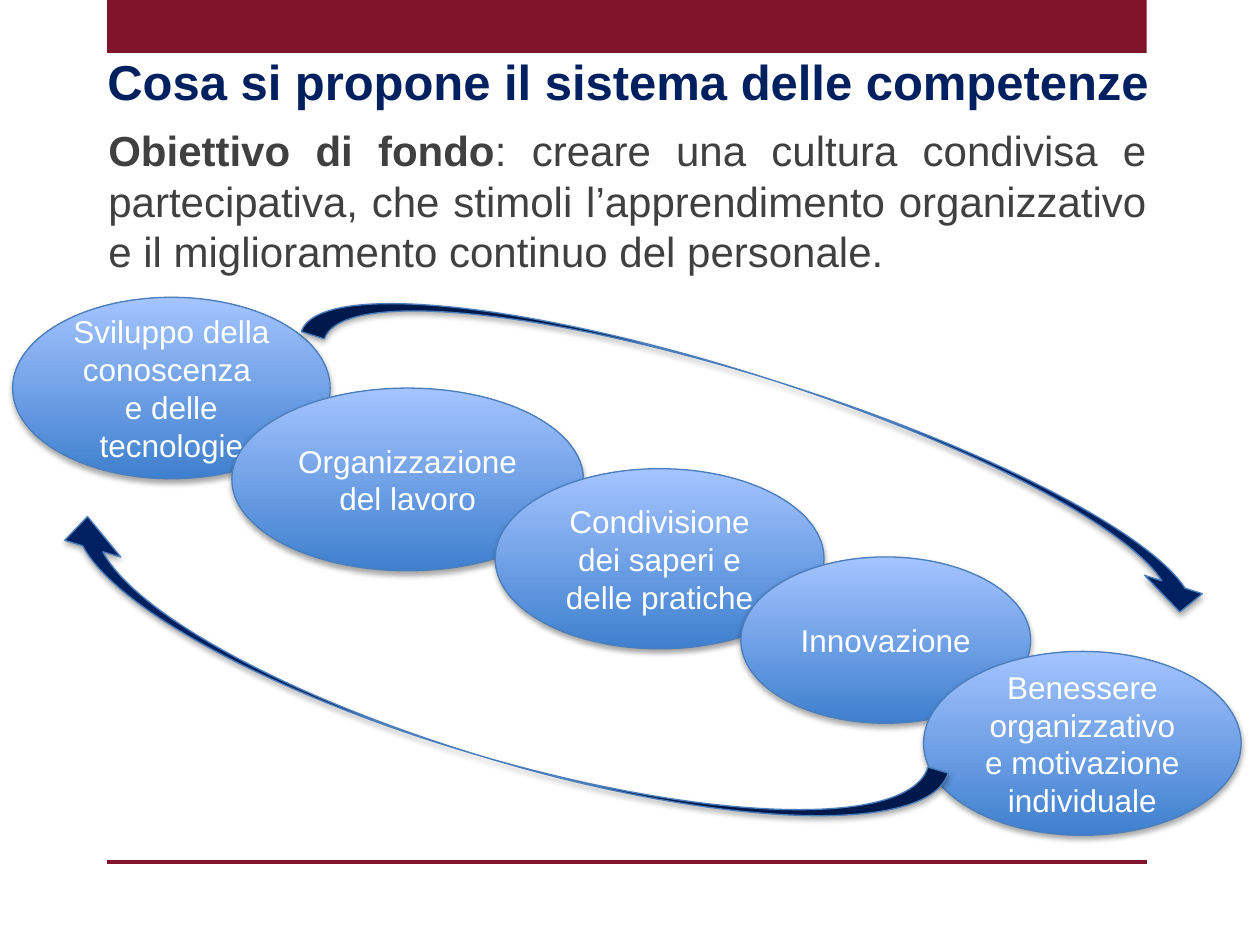
from lxml import etree
from pptx import Presentation
from pptx.dml.color import RGBColor
from pptx.enum.shapes import MSO_CONNECTOR, MSO_SHAPE
from pptx.enum.text import MSO_ANCHOR, MSO_AUTO_SIZE, PP_ALIGN
from pptx.oxml.ns import qn
from pptx.util import Inches, Pt

COLORS = {
    "band": "7F142A",
    "navy": "002060",
    "body": "404040",
    "white": "FFFFFF",
    "outline": "4B7EBC",
    "bubble_bottom": "3F80CE",
    "bubble_top": "A4C4FF",
}

# Each bubble: box (left, top, width, height) and its paragraphs
BUBBLES = [
    ((0.1, 2.36, 2.52, 1.44), ["Sviluppo della conoscenza ", "e delle tecnologie"]),
    ((1.84, 3.08, 2.79, 1.45), ["Organizzazione del lavoro"]),
    ((3.93, 3.72, 2.61, 1.43), ["Condivisione dei saperi e delle pratiche"]),
    ((5.88, 4.42, 2.3, 1.32), ["Innovazione"]),
    ((7.33, 5.17, 2.52, 1.46), ["Benessere organizzativo e motivazione individuale"]),
]

# Each cycle arrow: preset, box, rotation, adjustments
CYCLE_ARROWS = [
    (MSO_SHAPE.CURVED_DOWN_ARROW, (2.33, 3.03, 7.56, 0.77), 17.7, (0.25, 0.627, 0.25)),
    (MSO_SHAPE.CURVED_LEFT_ARROW, (3.4, 1.85, 0.93, 7.36), 106.6, (0.18, 0.5, 0.251)),
]


def color(name):
    return RGBColor.from_string(COLORS[name])


def inches(box):
    return [Inches(length) for length in box]


def place(placeholder, box):
    placeholder.left, placeholder.top, placeholder.width, placeholder.height = inches(box)
    frame = placeholder.text_frame
    frame.word_wrap = True
    frame.auto_size = MSO_AUTO_SIZE.NONE
    return frame


def style(paragraph, size, color_name, align):
    paragraph.alignment = align
    paragraph.font.name = "Arial"
    paragraph.font.size = Pt(size)
    paragraph.font.color.rgb = color(color_name)


def add_frame(slide, left, width, band_height, rule_top):
    """Band along the top edge and rule near the bottom."""
    band = slide.shapes.add_shape(MSO_SHAPE.RECTANGLE, *inches((left, 0, width, band_height)))
    band.shadow.inherit = False
    band.fill.solid()
    band.fill.fore_color.rgb = color("band")
    band.line.fill.background()

    rule = slide.shapes.add_connector(
        MSO_CONNECTOR.STRAIGHT, *inches((left, rule_top, left + width, rule_top)))
    rule.line.color.rgb = color("band")
    rule.line.width = Pt(2)
    etree.SubElement(rule._element.spPr, qn("a:effectLst"))


def add_title(slide, box):
    frame = place(slide.shapes.title, box)
    frame.text = "Cosa si propone il sistema delle competenze"
    heading = frame.paragraphs[0]
    style(heading, 28, "navy", PP_ALIGN.CENTER)
    heading.font.bold = True


def add_objective(slide, box):
    frame = place(slide.placeholders[1], box)
    frame.margin_left = 0
    objective = frame.paragraphs[0]
    objective.level = 1
    objective.space_before = Pt(0)
    properties = objective._p.get_or_add_pPr()
    properties.set("marL", str(Inches(0.5)))
    properties.set("indent", "0")
    etree.SubElement(properties, qn("a:buNone"))
    style(objective, 24, "body", PP_ALIGN.JUSTIFY)

    lead = objective.add_run()
    lead.text = "Obiettivo di fondo"
    lead.font.bold = True
    objective.add_run().text = (
        ": creare una cultura condivisa e partecipativa, che stimoli "
        "l’apprendimento organizzativo e il miglioramento continuo del personale.")


def outline(shape):
    shape.line.color.rgb = color("outline")
    shape.line.width = Pt(0.75)


def add_bubble(slide, box, lines):
    """Gradient ellipse; it keeps the theme's soft shadow."""
    bubble = slide.shapes.add_shape(MSO_SHAPE.OVAL, *inches(box))
    bubble.fill.gradient()
    bubble.fill.gradient_angle = 90
    for stop, name in zip(bubble.fill.gradient_stops, ("bubble_bottom", "bubble_top")):
        stop.color.rgb = color(name)
    for stop, position in zip(bubble.fill.gradient_stops, (0, 1)):
        stop.position = position
    outline(bubble)

    frame = bubble.text_frame
    frame.word_wrap = True
    frame.vertical_anchor = MSO_ANCHOR.MIDDLE
    frame.text = "\n".join(lines)
    for paragraph in frame.paragraphs:
        style(paragraph, 18, "white", PP_ALIGN.CENTER)


def add_cycle_arrow(slide, preset, box, rotation, adjustments):
    """Curved arrow closing the cycle; it keeps the theme's soft shadow."""
    arrow = slide.shapes.add_shape(preset, *inches(box))
    arrow.rotation = rotation
    for index, value in enumerate(adjustments):
        arrow.adjustments[index] = value
    arrow.fill.solid()
    arrow.fill.fore_color.rgb = color("navy")
    outline(arrow)


def main():
    deck = Presentation()
    deck.slide_width, deck.slide_height = Inches(10), Inches(7.5)
    slide = deck.slides.add_slide(deck.slide_layouts[1])

    add_frame(slide, left=0.85, width=8.25, band_height=0.42, rule_top=6.84)
    add_objective(slide, (0.36, 0.94, 8.84, 1.31))
    add_title(slide, (0.13, 0.36, 9.71, 0.57))

    # Chain of bubbles, then the arrows around it
    for box, lines in BUBBLES:
        add_bubble(slide, box, lines)
    for cycle_arrow in CYCLE_ARROWS:
        add_cycle_arrow(slide, *cycle_arrow)

    deck.save("out.pptx")


if __name__ == "__main__":
    main()
